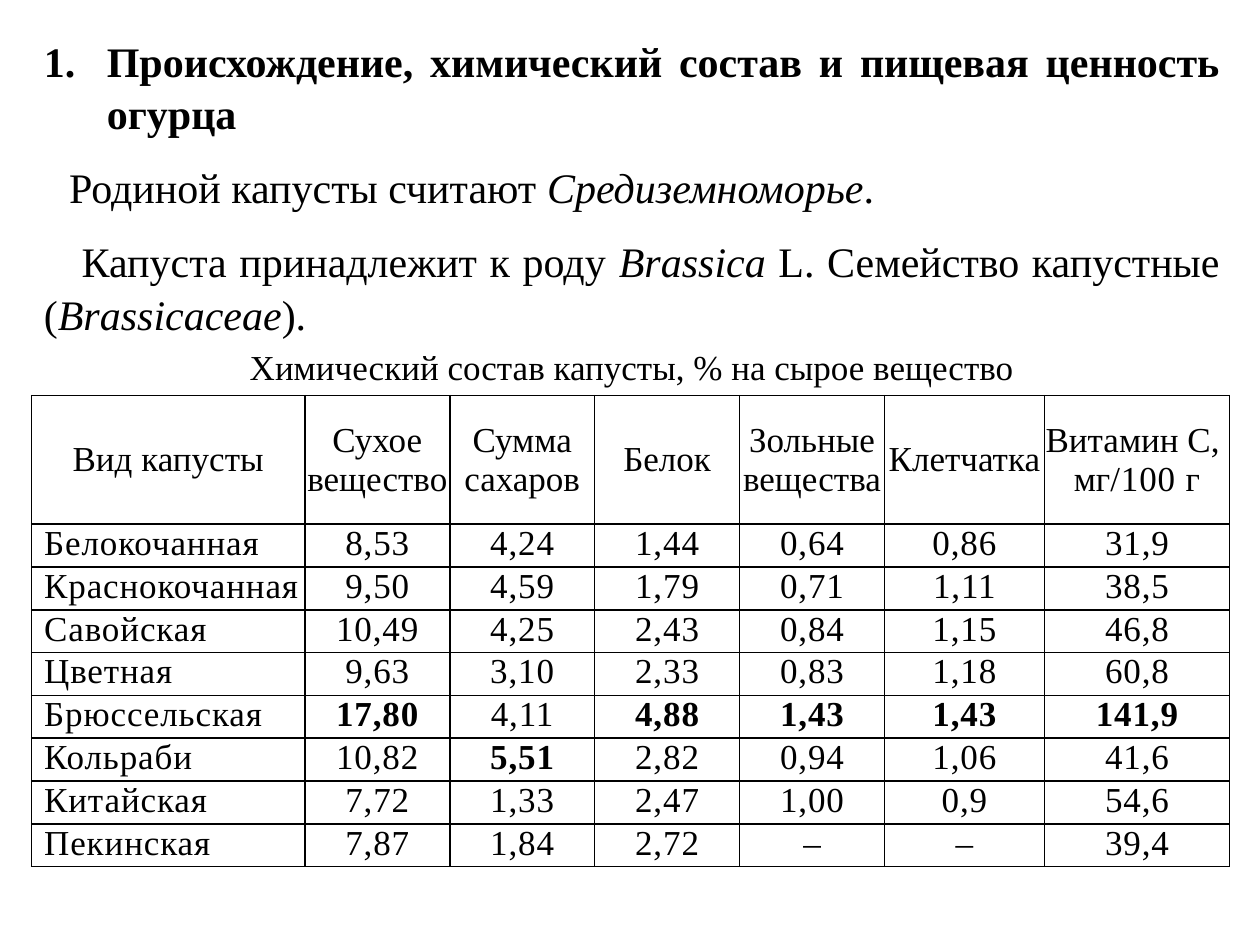
from lxml import etree
from pptx import Presentation
from pptx import util as u
from pptx.dml.color import RGBColor
from pptx.enum import text
from pptx.oxml import ns

BLACK = RGBColor(0, 0, 0)
WHITE = RGBColor(255, 255, 255)
ALIGN = text.PP_ALIGN

COLUMN_WIDTHS = [2.17, 1.15, 1.15, 1.15, 1.15, 1.27, 1.47]
HEADER_HEIGHT, ROW_HEIGHT = 1.02, 0.34
LETTER_SPACING = 50  # hundredths of a point
HEADERS = [
    ["Вид капусты"], ["Сухое", "вещество"], ["Сумма", "сахаров"], ["Белок"],
    ["Зольные", "вещества"], ["Клетчатка"], ["Витамин С, ", "мг/100 г"],
]
CABBAGES = [
    ["Белокочанная", "8,53", "4,24", "1,44", "0,64", "0,86", "31,9"],
    ["Краснокочанная", "9,50", "4,59", "1,79", "0,71", "1,11", "38,5"],
    ["Савойская", "10,49", "4,25", "2,43", "0,84", "1,15", "46,8"],
    ["Цветная", "9,63", "3,10", "2,33", "0,83", "1,18", "60,8"],
    ["Брюссельская", "17,80", "4,11", "4,88", "1,43", "1,43", "141,9"],
    ["Кольраби", "10,82", "5,51", "2,82", "0,94", "1,06", "41,6"],
    ["Китайская", "7,72", "1,33", "2,47", "1,00", "0,9", "54,6"],
    ["Пекинская", "7,87", "1,84", "2,72", "–", "–", "39,4"],
]
HIGHEST = {"17,80", "5,51", "4,88", "1,43", "141,9"}


class SlideWriter:
    font = "Times New Roman"
    color = BLACK

    def __init__(self, slide):
        self.slide = slide

    def text_box(self, left, top, width, height):
        shape = self.slide.shapes.add_textbox(
            u.Inches(left), u.Inches(top), u.Inches(width), u.Inches(height))
        shape.text_frame.word_wrap = True
        return shape.text_frame

    def paragraph(self, frame, align, margin=0, indent=0, numbered=False):
        """Return the frame's empty first paragraph, or a new one after it."""
        paragraph = frame.paragraphs[0]
        if paragraph.runs:
            paragraph = frame.add_paragraph()
        paragraph.alignment = align
        properties = paragraph._p.get_or_add_pPr()
        properties.set("marL", str(u.Inches(margin)))
        properties.set("indent", str(u.Inches(indent)))
        if numbered:
            etree.SubElement(properties, ns.qn("a:buAutoNum"), type="arabicPeriod")
        return paragraph

    def run(self, paragraph, words, size, bold=False, italic=False, spacing=0):
        run = paragraph.add_run()
        run.text = words
        run.font.name = self.font
        run.font.size = u.Pt(size)
        run.font.bold = bold
        run.font.italic = italic
        run.font.color.rgb = self.color
        if spacing:
            run._r.get_or_add_rPr().set("spc", str(spacing))

    def table(self, left, top, widths, heights):
        shape = self.slide.shapes.add_table(
            len(heights), len(widths), u.Inches(left), u.Inches(top),
            u.Inches(sum(widths)), u.Inches(sum(heights)))
        table = shape.table
        table.first_row = table.horz_banding = False
        for column, width in zip(table.columns, widths):
            column.width = u.Inches(width)
        for row, height in zip(table.rows, heights):
            row.height = u.Inches(height)
        for cell in table.iter_cells():
            self.cell_style(cell)
        return table

    def cell_style(self, cell):
        cell.margin_left = cell.margin_right = 0
        cell.margin_top = cell.margin_bottom = 0
        properties = cell._tc.get_or_add_tcPr()
        for side in ("lnL", "lnR", "lnT", "lnB"):
            line = etree.SubElement(properties, ns.qn(f"a:{side}"), w=str(u.Pt(1)))
            fill = etree.SubElement(line, ns.qn("a:solidFill"))
            etree.SubElement(fill, ns.qn("a:srgbClr"), val=str(self.color))
        cell.fill.solid()
        cell.fill.fore_color.rgb = WHITE


def add_introduction(writer):
    frame = writer.text_box(0.25, 0.21, 9.53, 2.46)
    heading = writer.paragraph(frame, ALIGN.JUSTIFY, 0.5, -0.5, numbered=True)
    writer.run(heading, "Происхождение, химический состав и пищевая ценность огурца",
               24, bold=True)
    # Each pair is a piece of text and whether it is italic.
    sentences = [
        (0.2, [("Родиной капусты считают ", False), ("Средиземноморье", True),
               (".", False)]),
        (0.3, [("Капуста принадлежит к роду ", False), ("Brassica ", True),
               ("L. Семейство капустные (", False), ("Brassicaceae", True),
               (").", False)]),
    ]
    for indent, pieces in sentences:
        paragraph = writer.paragraph(frame, ALIGN.JUSTIFY, indent=indent)
        paragraph.space_before = u.Pt(12)
        for words, italic in pieces:
            writer.run(paragraph, words, 24, italic=italic)
    for paragraph in frame.paragraphs:
        paragraph.line_spacing = 1.05


def add_composition_table(writer):
    heights = [HEADER_HEIGHT] + [ROW_HEIGHT] * len(CABBAGES)
    table = writer.table(0.25, 3.14, COLUMN_WIDTHS, heights)
    for column, lines in enumerate(HEADERS):
        cell = table.cell(0, column)
        cell.vertical_anchor = text.MSO_ANCHOR.MIDDLE
        for line in lines:
            paragraph = writer.paragraph(cell.text_frame, ALIGN.CENTER)
            unit, slash, amount = line.partition("/")
            writer.run(paragraph, unit, 20)
            if slash:
                writer.run(paragraph, slash + amount, 20, spacing=LETTER_SPACING)
    for row, values in enumerate(CABBAGES, start=1):
        for column, value in enumerate(values):
            align, indent = (ALIGN.CENTER, 0) if column else (ALIGN.LEFT, 0.1)
            frame = table.cell(row, column).text_frame
            paragraph = writer.paragraph(frame, align, indent=indent)
            writer.run(paragraph, value, 20, bold=value in HIGHEST,
                       spacing=LETTER_SPACING)


def add_caption(writer):
    frame = writer.text_box(0.25, 2.69, 9.53, 0.44)
    paragraph = writer.paragraph(frame, ALIGN.CENTER)
    writer.run(paragraph, "Химический состав капусты, % на сырое вещество", 20)


def main():
    presentation = Presentation()
    presentation.slide_width = u.Inches(10)
    presentation.slide_height = u.Inches(7.5)
    slide = presentation.slides.add_slide(presentation.slide_layouts[6])
    writer = SlideWriter(slide)
    add_introduction(writer)
    add_composition_table(writer)
    add_caption(writer)
    presentation.save("out.pptx")


if __name__ == "__main__":
    main()
